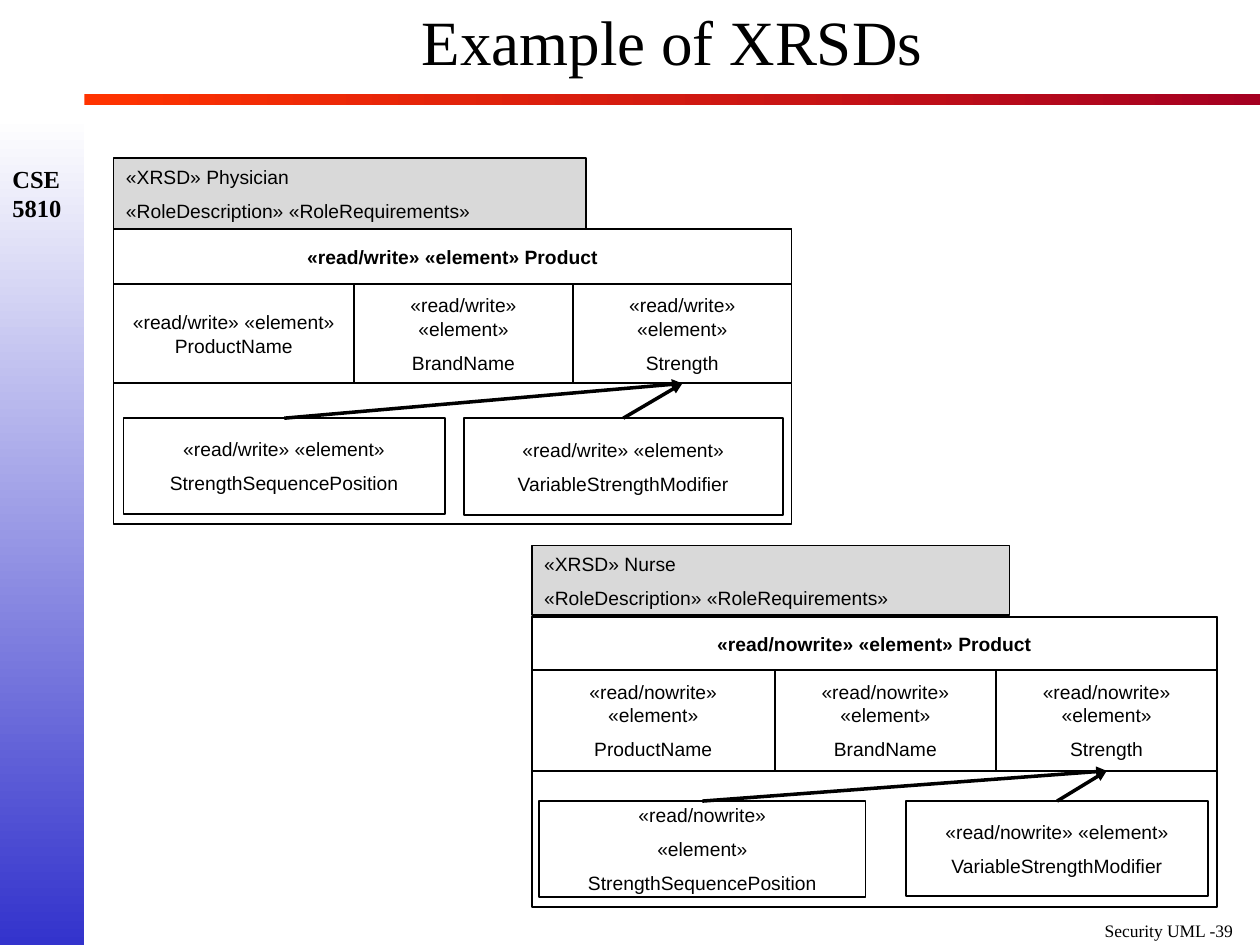
"""Build the slide showing two XRSD diagrams, for a physician and a nurse."""
from lxml import etree
from pptx import Presentation
from pptx.dml.color import RGBColor
from pptx.enum.shapes import MSO_CONNECTOR, MSO_SHAPE
from pptx.enum.text import MSO_ANCHOR, PP_ALIGN
from pptx.oxml.ns import qn
from pptx.util import Cm, Pt

RECTANGLE = MSO_SHAPE.RECTANGLE
STRAIGHT = MSO_CONNECTOR.STRAIGHT
TOP, MIDDLE = MSO_ANCHOR.TOP, MSO_ANCHOR.MIDDLE
LEFT, CENTER, JUSTIFY = PP_ALIGN.LEFT, PP_ALIGN.CENTER, PP_ALIGN.JUSTIFY
SIDE_TOP, SIDE_BOTTOM = 0, 2

COLORS = {
    "black": "000000", "white": "FFFFFF", "gray": "D9D9D9",
    "blue": "3333CC", "orange": "FF3300", "crimson": "A50021",
}
COLORS = {name: RGBColor.from_string(value) for name, value in COLORS.items()}


def write(box, text, size=11, font="Arial", bold=False, align=CENTER,
          anchor=MIDDLE, before=6.2, line_spacing=None):
    frame = box.text_frame
    frame.word_wrap = True
    frame.vertical_anchor = anchor
    for index, line in enumerate(text.split("\n")):
        para = frame.add_paragraph() if index else frame.paragraphs[0]
        para.alignment = align
        if index:
            para.space_before = Pt(before)
        if line_spacing:
            para.line_spacing = line_spacing
        span = para.add_run()
        span.text = line
        span.font.size = Pt(size)
        span.font.name = font
        span.font.bold = bold
        span.font.color.rgb = COLORS["black"]


def add_box(shapes, left, top, width, height, fill="white", outline=True):
    box = shapes.add_shape(RECTANGLE, Cm(left), Cm(top), Cm(width), Cm(height))
    box.shadow.inherit = False
    if fill:
        box.fill.solid()
        box.fill.fore_color.rgb = COLORS[fill]
    else:
        box.fill.background()
    if outline:
        box.line.color.rgb = COLORS["black"]
        box.line.width = Pt(1)
    else:
        box.line.fill.background()
    return box


deck = Presentation()
deck.slide_width, deck.slide_height = Cm(25.4), Cm(19.05)
page = deck.slides.add_slide(deck.slide_layouts[6])

bands = [
    ((0, 2.34, 1.7, 16.71), ("white", "blue"), 270),
    ((1.7, 1.9, 23.7, 0.21), ("orange", "crimson"), 0),
]
for place, stop_colors, angle in bands:
    band = add_box(page.shapes, *place, outline=False)
    band.fill.gradient()
    band.fill.gradient_angle = angle
    for stop, color in zip(band.fill.gradient_stops, stop_colors):
        stop.color.rgb = COLORS[color]

labels = [
    ((22.02, 18.42, 3.38, 0.66), "Security UML -39",
     {"size": 10, "align": LEFT, "anchor": TOP}),
    ((0, 3.18, 1.7, 1.45), "CSE\n5810",
     {"size": 14, "bold": True, "align": LEFT, "anchor": TOP, "before": 0}),
    ((1.7, 0, 23.7, 1.9), "Example of XRSDs",
     {"size": 36, "line_spacing": 0.8}),
]
for place, text, style in labels:
    label = page.shapes.add_textbox(*map(Cm, place))
    write(label, text, font="Times New Roman", **style)

diagrams = [
    {
        "role": "Physician", "access": "«read/write»", "left": 2.29,
        "header": (3.18, 9.53, 1.45), "frame": (4.62, 13.67, 5.94),
        "title_height": 1.1, "row": (5.73, 2.0),
        "cells": [(4.85, " ProductName"), (4.41, "\nBrandName"),
                  (4.41, "\nStrength")],
        "parts": [((2.49, 8.43, 6.48, 1.93), " ", "StrengthSequencePosition"),
                  ((9.35, 8.43, 6.43, 1.96), " ", "VariableStrengthModifier")],
    },
    {
        "role": "Nurse", "access": "«read/nowrite»", "left": 10.72,
        "header": (11.0, 9.63, 1.4), "frame": (12.44, 13.82, 5.84),
        "title_height": 1.08, "row": (13.51, 2.03),
        "cells": [(4.9, "\nProductName"), (4.46, "\nBrandName"),
                  (4.46, "\nStrength")],
        "parts": [((10.87, 16.15, 6.58, 1.93), "\n", "StrengthSequencePosition"),
                  ((18.26, 16.15, 6.1, 1.91), " ", "VariableStrengthModifier")],
    },
]
for diagram in diagrams:
    shapes = page.shapes.add_group_shape().shapes
    left, access = diagram["left"], diagram["access"]
    frame_top, frame_width, frame_height = diagram["frame"]
    add_box(shapes, left, frame_top, frame_width, frame_height, fill=None)

    header = add_box(shapes, left, *diagram["header"], fill="gray")
    write(header, f"«XRSD» {diagram['role']}\n«RoleDescription» «RoleRequirements»",
          align=JUSTIFY)
    title = add_box(shapes, left, frame_top, frame_width, diagram["title_height"])
    write(title, f"{access} «element» Product", bold=True)

    row_top, row_height = diagram["row"]
    for width, name in diagram["cells"]:
        cell = add_box(shapes, left, row_top, width, row_height)
        write(cell, f"{access} «element»{name}")
        left += width
    strength = cell

    parts = []
    for place, separator, name in diagram["parts"]:
        part = add_box(shapes, *place)
        write(part, f"{access}{separator}«element»\n{name}")
        parts.append(part)

    for part in parts:
        arrow = shapes.add_connector(STRAIGHT, 0, 0, 0, 0)
        arrow.begin_connect(part, SIDE_TOP)
        arrow.end_connect(strength, SIDE_BOTTOM)
        arrow.line.color.rgb = COLORS["black"]
        arrow.line.width = Pt(2)
        etree.SubElement(arrow.line._get_or_add_ln(), qn("a:tailEnd"), type="triangle")
        etree.SubElement(arrow._element.spPr, qn("a:effectLst"))
    shapes._recalculate_extents()

deck.save("out.pptx")
